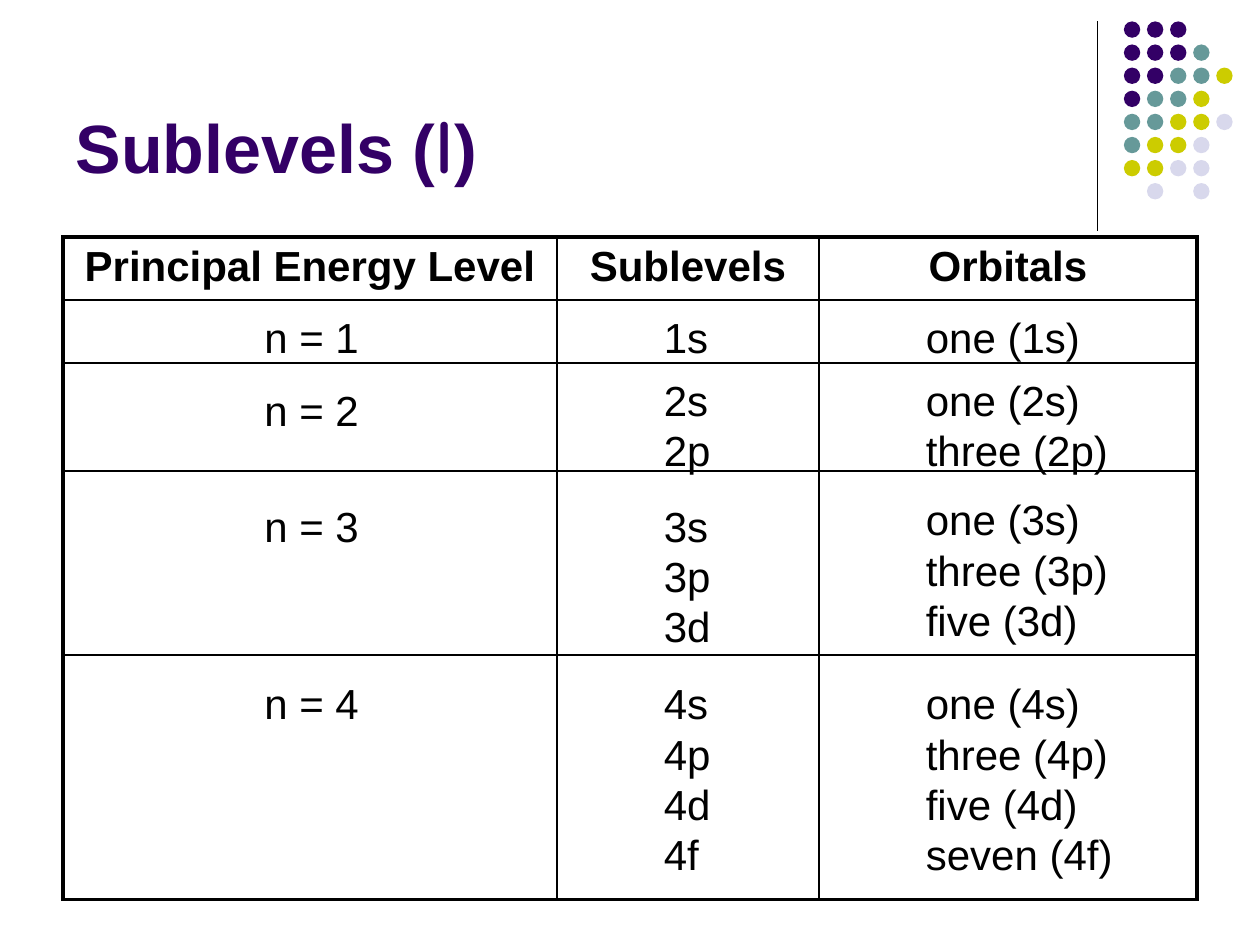
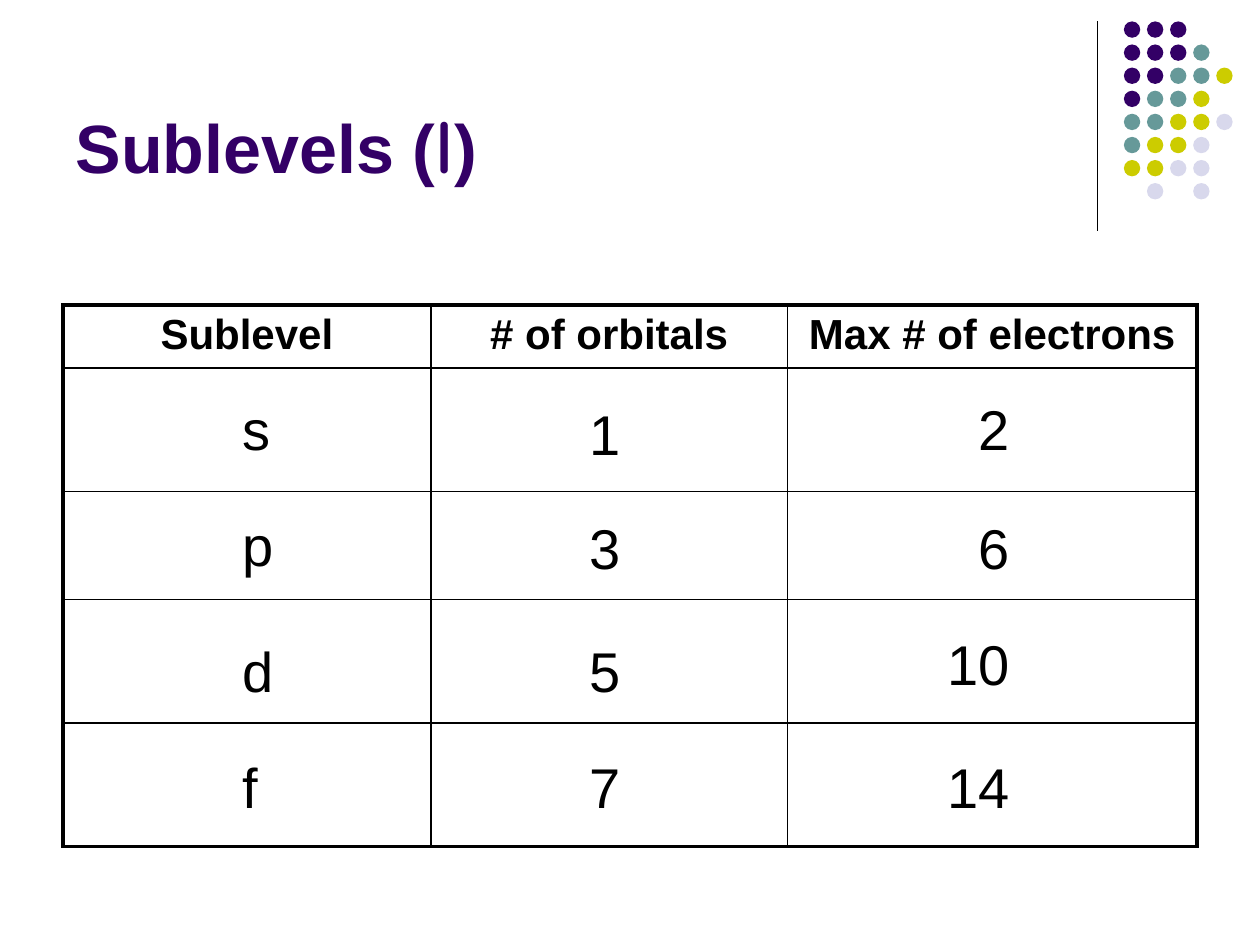
from lxml.etree import SubElement
from pptx import Presentation
from pptx.dml.color import RGBColor
from pptx.enum.shapes import MSO_CONNECTOR, MSO_SHAPE
from pptx.enum.text import MSO_ANCHOR, MSO_AUTO_SIZE, PP_ALIGN
from pptx.oxml.ns import qn
from pptx.util import Inches, Pt

BLACK = RGBColor(0x00, 0x00, 0x00)
PURPLE = RGBColor(0x33, 0x00, 0x66)
TEAL = RGBColor(0x66, 0x99, 0x99)
LIME = RGBColor(0xCC, 0xCC, 0x00)
LAVENDER = RGBColor(0xD8, 0xD8, 0xEC)

FONT = "Arial"
TITLE_RUNS = [("Sublevels (", FONT, 39), ("l", "Comic Neue", 44), (")", FONT, 39)]

DOT_COLORS = {"P": PURPLE, "T": TEAL, "L": LIME, "V": LAVENDER}
DOT_ROWS = ["PPP", "PPPT", "PPTTL", "PTTL", "TTLLV", "TLLV", "LLVV", ".V.V"]
DOT_LEFT, DOT_TOP, DOT_SIZE, DOT_PITCH = 8.92, 0.17, 0.13, 0.55 / 3

THICK, THIN = 2.25, 1

SLIDES = [
    {
        "headers": ["Principal Energy Level", "Sublevels", "Orbitals"],
        "top": 1.88,
        "widths": [3.92, 2.08, 3],
        "heights": [0.5, 0.5, 0.86, 1.46, 1.94],
        "size": 24,
        "line_height": 0.4,
        "labels": [
            (2, [(2.42, 1.83, ["n = 1"]), (3, 1.83, ["n = 2"]),
                 (3.92, 1.83, ["n = 3"]), (5.33, 1.83, ["n = 4"])]),
            (5.17, [(2.42, 0.75, ["1s"]), (2.92, 0.75, ["2s", "2p"]),
                    (3.92, 0.75, ["3s", "3p", "3d"]),
                    (5.33, 0.75, ["4s", "4p", "4d", "4f"])]),
            (7.25, [(2.42, 1.5, ["one (1s)"]),
                    (2.92, 1.67, ["one (2s)", "three (2p)"]),
                    (3.87, 1.67, ["one (3s)", "three (3p)", "five (3d)"]),
                    (5.33, 1.83, ["one (4s)", "three (4p)", "five (4d)", "seven (4f)"])]),
        ],
    },
    {
        "headers": ["Sublevel", "# of orbitals", "Max # of electrons"],
        "top": 2.42,
        "widths": [2.92, 2.83, 3.25],
        "heights": [0.5, 0.98, 0.86, 0.98, 0.98],
        "size": 32,
        "line_height": 0.53,
        "labels": [
            (1.83, [(3.08, 1.83, ["s"]), (4, 1.83, ["p"]),
                    (5, 1.83, ["d"]), (5.92, 1.83, ["f"])]),
            (4.58, [(3.12, 0.75, ["1"]), (4.03, 0.75, ["3"]),
                    (5, 0.75, ["5"]), (5.92, 0.75, ["7"])]),
            (7.67, [(3.08, 0.75, ["2"]), (4.03, 0.67, ["6"])]),
            (7.42, [(4.95, 0.83, ["10"]), (5.92, 0.83, ["14"])]),
        ],
    },
]


def add_run(paragraph, text, size, color=BLACK, bold=False, font=FONT):
    """Append one formatted run to a paragraph."""
    run = paragraph.add_run()
    run.text = text
    run.font.name = font
    run.font.size = Pt(size)
    run.font.bold = bold
    run.font.color.rgb = color


def add_title(slide):
    """Place and fill the title placeholder."""
    title = slide.shapes.title
    title.left, title.top = Inches(0.5), Inches(0.13)
    title.width, title.height = Inches(8.25), Inches(1.42)
    frame = title.text_frame
    frame.auto_size = MSO_AUTO_SIZE.NONE
    frame.vertical_anchor = MSO_ANCHOR.BOTTOM
    paragraph = frame.paragraphs[0]
    paragraph.alignment = PP_ALIGN.LEFT
    for text, font, size in TITLE_RUNS:
        add_run(paragraph, text, size, PURPLE, True, font)


def add_corner(slide):
    """Draw the vertical rule and the grid of dots beside it."""
    rule = slide.shapes.add_connector(
        MSO_CONNECTOR.STRAIGHT, Inches(8.71), Inches(0.17), Inches(8.71), Inches(1.83))
    rule.line.color.rgb = BLACK
    rule.line.width = Pt(0.75)
    SubElement(rule._element.spPr, qn("a:effectLst"))
    dots = slide.shapes.add_group_shape()
    for row, pattern in enumerate(DOT_ROWS):
        for column, key in enumerate(pattern):
            if key in DOT_COLORS:
                dot = dots.shapes.add_shape(
                    MSO_SHAPE.OVAL,
                    Inches(DOT_LEFT + column * DOT_PITCH),
                    Inches(DOT_TOP + row * DOT_PITCH),
                    Inches(DOT_SIZE), Inches(DOT_SIZE))
                dot.shadow.inherit = False
                dot.fill.solid()
                dot.fill.fore_color.rgb = DOT_COLORS[key]
                dot.line.fill.background()


def set_borders(cell, widths):
    """Draw the left, right, top and bottom borders of a cell."""
    properties = cell._tc.get_or_add_tcPr()
    for side, width in zip("LRTB", widths):
        line = SubElement(properties, qn(f"a:ln{side}"), w=str(Pt(width)))
        fill = SubElement(line, qn("a:solidFill"))
        SubElement(fill, qn("a:srgbClr"), val=str(BLACK))


def add_grid(slide, headers, top, widths, heights):
    """Add the ruled table with its header row."""
    table = slide.shapes.add_table(
        len(heights), len(widths), Inches(0.5), Inches(top),
        Inches(sum(widths)), Inches(sum(heights))).table
    table.first_row = table.horz_banding = False
    for column, width in zip(table.columns, widths):
        column.width = Inches(width)
    for row, height in zip(table.rows, heights):
        row.height = Inches(height)
    last_row, last_column = len(heights) - 1, len(widths) - 1
    for r, row in enumerate(table.rows):
        for c, cell in enumerate(row.cells):
            edges = (c == 0, c == last_column, r == 0, r == last_row)
            set_borders(cell, [THICK if edge else THIN for edge in edges])
            cell.fill.background()
    for cell, header in zip(table.rows[0].cells, headers):
        paragraph = cell.text_frame.paragraphs[0]
        paragraph.alignment = PP_ALIGN.CENTER
        add_run(paragraph, header, 24, bold=True)


def add_labels(slide, labels, size, line_height):
    """Add the text boxes that lie over the table, column by column."""
    for left, entries in labels:
        for top, width, lines in entries:
            box = slide.shapes.add_textbox(
                Inches(left), Inches(top), Inches(width),
                Inches(0.1 + line_height * len(lines)))
            frame = box.text_frame
            frame.word_wrap = True
            frame.auto_size = MSO_AUTO_SIZE.SHAPE_TO_FIT_TEXT
            add_run(frame.paragraphs[0], " ".join(lines), size)


def main():
    """Build both slides and save the presentation."""
    presentation = Presentation()
    presentation.slide_width, presentation.slide_height = Inches(10), Inches(7.5)
    for content in SLIDES:
        slide = presentation.slides.add_slide(presentation.slide_layouts[5])
        add_corner(slide)
        add_title(slide)
        add_grid(slide, content["headers"], content["top"],
                 content["widths"], content["heights"])
        add_labels(slide, content["labels"], content["size"], content["line_height"])
    presentation.save("out.pptx")


if __name__ == "__main__":
    main()
